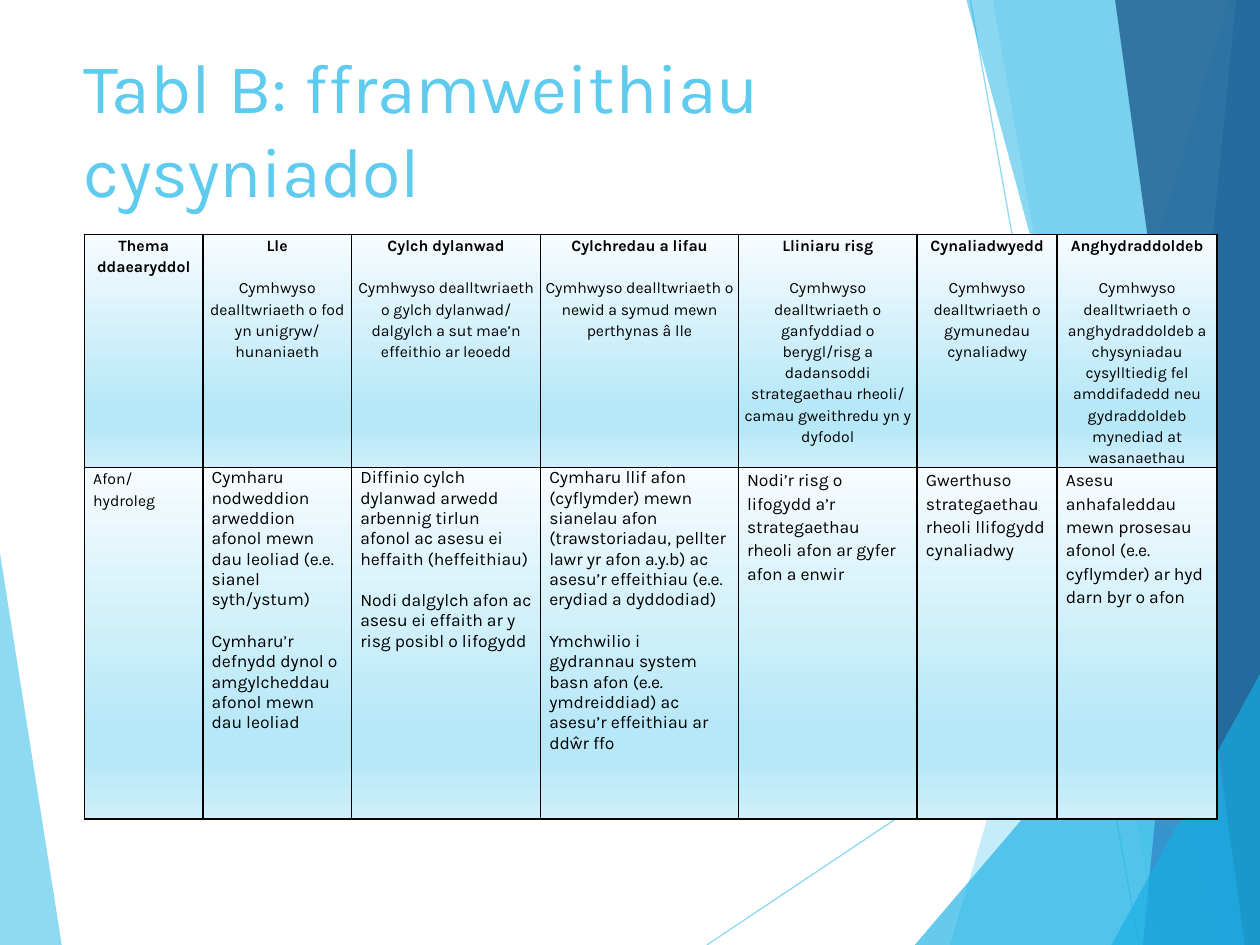
from dataclasses import dataclass

from lxml import etree
from pptx import Presentation
from pptx import util as u
from pptx.dml.color import RGBColor
from pptx.enum import shapes, text
from pptx.oxml.ns import qn

PX = 9144  # EMU per px, 100 px to the inch


@dataclass(frozen=True)
class Theme:
    font: str = "Karla"
    sky: str = "5FCBEF"
    azure: str = "17B0E4"
    blue: str = "2E83C3"
    navy: str = "226292"
    ink: str = "000000"
    title: int = 40
    body: int = 10
    small: int = 9
    # (position in %, colour), top to bottom
    cell_stops: tuple = ((0, "F7FCFE"), (74, "B7E8F8"), (83, "B7E8F8"), (100, "CFEFFA"))


THEME = Theme()


@dataclass(frozen=True)
class Facet:
    points: tuple
    color: str
    alpha: int


@dataclass(frozen=True)
class Ray:
    start: tuple
    end: tuple


@dataclass(frozen=True)
class Concept:
    width: int
    name: str
    summary: str
    river: tuple
    spacing: float = 1.15


LEFT_FACET = Facet(((0, 439), (49, 750), (0, 750)), THEME.sky, 70)
RAYS = (Ray((561, 750), (1000, 457)), Ray((770, 0), (904, 750)))
RIGHT_FACETS = (
    Facet(((975, 0), (754, 750), (1000, 750), (1000, 0)), THEME.sky, 36),
    Facet(((788, 0), (919, 750), (1000, 750), (1000, 0)), THEME.sky, 20),
    Facet(((726, 750), (1000, 429), (1000, 750)), THEME.azure, 66),
    Facet(((767, 0), (970, 750), (1000, 750), (1000, 0)), THEME.azure, 50),
    Facet(((981, 0), (907, 750), (1000, 750), (1000, 0)), THEME.blue, 70),
    Facet(((885, 0), (988, 750), (1000, 750), (1000, 0)), THEME.navy, 82),
    Facet(((882, 750), (1000, 535), (1000, 750)), THEME.azure, 66),
)

THEME_COLUMN = (94, "Thema ddaearyddol", "Afon/hydroleg")
CONCEPTS = (
    Concept(118, "Lle", "Cymhwyso dealltwriaeth o fod yn unigryw/ hunaniaeth",
            ("Cymharu nodweddion arweddion afonol mewn dau leoliad (e.e. sianel syth/ystum)",
             "Cymharu’r defnydd dynol o amgylcheddau afonol mewn dau leoliad"), 1.0),
    Concept(150, "Cylch dylanwad",
            "Cymhwyso dealltwriaeth o gylch dylanwad/ dalgylch a sut mae’n effeithio ar leoedd",
            ("Diffinio cylch dylanwad arwedd arbennig tirlun afonol ac asesu ei heffaith "
             "(heffeithiau)",
             "Nodi dalgylch afon ac asesu ei effaith ar y risg posibl o lifogydd"), 1.0),
    Concept(157, "Cylchredau a lifau",
            "Cymhwyso dealltwriaeth o newid a symud mewn perthynas â lle",
            ("Cymharu llif afon (cyflymder) mewn sianelau afon (trawstoriadau, pellter lawr "
             "yr afon a.y.b) ac asesu’r effeithiau (e.e. erydiad a dyddodiad)",
             "Ymchwilio i gydrannau system basn afon (e.e. ymdreiddiad) ac asesu’r effeithiau "
             "ar ddŵr ffo"), 1.0),
    Concept(142, "Lliniaru risg",
            "Cymhwyso dealltwriaeth o ganfyddiad o berygl/risg a dadansoddi strategaethau "
            "rheoli/ camau gweithredu yn y dyfodol",
            ("Nodi’r risg o lifogydd a’r strategaethau rheoli afon ar gyfer afon a enwir",)),
    Concept(111, "Cynaliadwyedd", "Cymhwyso dealltwriaeth o gymunedau cynaliadwy",
            ("Gwerthuso strategaethau rheoli llifogydd cynaliadwy",)),
    Concept(127, "Anghydraddoldeb",
            "Cymhwyso dealltwriaeth o anghydraddoldeb a chysyniadau cysylltiedig fel "
            "amddifadedd neu gydraddoldeb mynediad at wasanaethau",
            ("Asesu anhafaleddau mewn prosesau afonol (e.e. cyflymder) ar hyd darn byr o afon",)),
)
ROW_HEIGHTS = (185, 279)


def px(n: int) -> u.Emu:
    return u.Emu(n * PX)


def set_alpha(sp, percent: int) -> None:
    for color in sp._element.spPr.iter(qn("a:srgbClr")):
        etree.SubElement(color, qn("a:alpha"), val=str(percent * 1000))


def draw_facet(s, facet: Facet) -> None:
    builder = s.shapes.build_freeform(*facet.points[0], scale=PX)
    builder.add_line_segments(facet.points[1:], close=True)
    sp = builder.convert_to_shape()
    sp.shadow.inherit = False
    sp.fill.solid()
    sp.fill.fore_color.rgb = RGBColor.from_string(facet.color)
    sp.line.fill.background()
    set_alpha(sp, facet.alpha)


def draw_ray(s, ray: Ray) -> None:
    sp = s.shapes.add_connector(shapes.MSO_CONNECTOR.STRAIGHT,
                                *map(px, ray.start + ray.end))
    sp.line.color.rgb = RGBColor.from_string(THEME.sky)
    sp.line.width = u.Pt(0.75)
    set_alpha(sp, 70)
    etree.SubElement(sp._element.spPr, qn("a:effectLst"))


def format_run(p, size: int, color: str, bold: bool = False) -> None:
    for r in p.runs:
        r.font.name = THEME.font
        r.font.size = u.Pt(size)
        r.font.bold = bold
        r.font.color.rgb = RGBColor.from_string(color)


def style_cell(cell, inset: int) -> None:
    """Give a cell its side insets, black borders and gradient fill."""
    cell.margin_left = cell.margin_right = px(inset)
    cell.margin_top = cell.margin_bottom = 0
    props = cell._tc.get_or_add_tcPr()
    for side in ("lnL", "lnR", "lnT", "lnB"):
        line = etree.SubElement(props, qn(f"a:{side}"), w=str(u.Pt(1)))
        fill = etree.SubElement(line, qn("a:solidFill"))
        etree.SubElement(fill, qn("a:srgbClr"), val=THEME.ink)
    grad = etree.SubElement(props, qn("a:gradFill"), rotWithShape="1")
    stops = etree.SubElement(grad, qn("a:gsLst"))
    for position, color in THEME.cell_stops:
        stop = etree.SubElement(stops, qn("a:gs"), pos=str(position * 1000))
        etree.SubElement(stop, qn("a:srgbClr"), val=color)
    etree.SubElement(grad, qn("a:lin"), ang="5400000", scaled="0")


def fill_cell(cell, paragraphs: tuple, size: int, spacing: float = 1.15,
              header: bool = False) -> None:
    style_cell(cell, 4 if header else 7)
    tf = cell.text_frame
    for i, content in enumerate(paragraphs):
        p = tf.add_paragraph() if i else tf.paragraphs[0]
        p.text = content
        p.alignment = text.PP_ALIGN.CENTER if header else text.PP_ALIGN.LEFT
        p.line_spacing = spacing
        p.space_before = u.Pt(12 if i else 0)
        format_run(p, size, THEME.ink, bold=header and i == 0)


def draw_table(s) -> None:
    widths = (THEME_COLUMN[0], *(c.width for c in CONCEPTS))
    frame = s.shapes.add_table(len(ROW_HEIGHTS), len(widths), px(67), px(186),
                               px(sum(widths)), px(sum(ROW_HEIGHTS)))
    table = frame.table
    table.first_row = table.horz_banding = False
    for column, width in zip(table.columns, widths):
        column.width = px(width)
    for row, height in zip(table.rows, ROW_HEIGHTS):
        row.height = px(height)

    fill_cell(table.cell(0, 0), THEME_COLUMN[1:2], THEME.small, header=True)
    fill_cell(table.cell(1, 0), THEME_COLUMN[2:], THEME.small)
    for i, concept in enumerate(CONCEPTS, start=1):
        fill_cell(table.cell(0, i), (concept.name, concept.summary), THEME.small, header=True)
        fill_cell(table.cell(1, i), concept.river, THEME.body, concept.spacing)


def draw_title(s, content: str) -> None:
    sp = s.shapes.title
    sp.left, sp.top, sp.width, sp.height = map(px, (56, 29, 694, 144))
    tf = sp.text_frame
    tf.text = content
    tf.word_wrap = True
    tf.auto_size = text.MSO_AUTO_SIZE.NONE
    tf.vertical_anchor = text.MSO_ANCHOR.MIDDLE
    p = tf.paragraphs[0]
    p.alignment = text.PP_ALIGN.LEFT
    format_run(p, THEME.title, THEME.sky)


def main() -> None:
    prs = Presentation()
    prs.slide_width, prs.slide_height = px(1000), px(750)
    s = prs.slides.add_slide(prs.slide_layouts[5])
    draw_facet(s, LEFT_FACET)
    for ray in RAYS:
        draw_ray(s, ray)
    for facet in RIGHT_FACETS:
        draw_facet(s, facet)
    draw_title(s, "Tabl B: fframweithiau cysyniadol")
    draw_table(s)
    prs.save("out.pptx")


if __name__ == "__main__":
    main()
